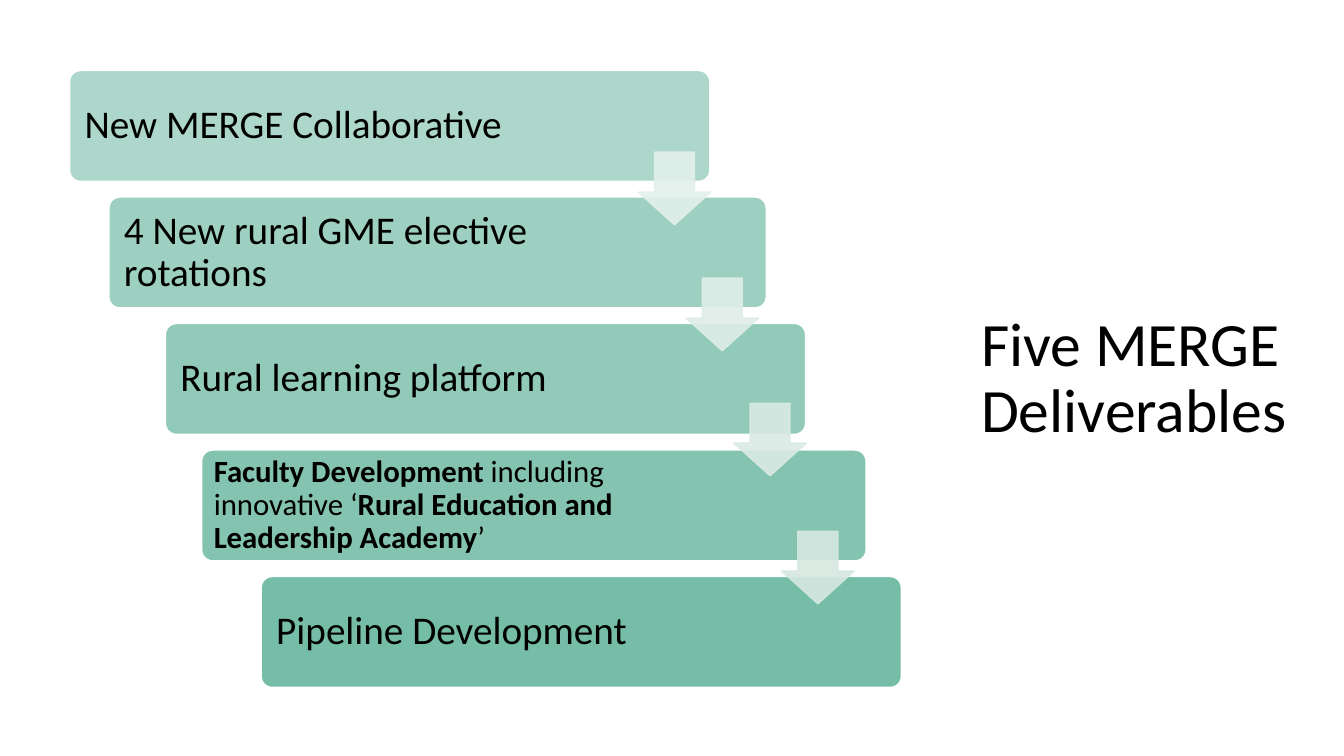
from dataclasses import dataclass

from lxml import etree
from pptx import Presentation
from pptx import util as u
from pptx.dml.color import RGBColor
from pptx.enum import shapes, text
from pptx.oxml.ns import qn

FONT = "Calibri"
BLACK = "000000"
FIRST_TOP = 0.7
STEP_PITCH = 1.255
STEP_HEIGHT = 1.1
LABEL_GAP = 0.03
ARROW_SIZE = 0.72
ARROW_LEFT = 6.33
ARROW_SHIFT = 0.474
ARROW_OPACITY = 90


@dataclass(frozen=True)
class Phrase:
    wording: str
    bold: bool = False


@dataclass(frozen=True)
class Step:
    left: float
    width: float
    label_width: float
    fill: str
    phrases: tuple[Phrase, ...]
    size: int = 28
    inset: float = 0.12


@dataclass(frozen=True)
class Arrow:
    top: float
    fill: str


STEPS = (
    Step(0.69, 6.35, 5.03, "ACD7CA", (Phrase("New MERGE Collaborative"),)),
    Step(1.08, 6.52, 5.23, "9ED0C1", (Phrase("4 New rural GME elective rotations"),)),
    Step(1.64, 6.35, 5.1, "91CAB9", (Phrase("Rural learning platform"),)),
    Step(2, 6.59, 5.29, "83C3B0", (
        Phrase("Faculty Development ", True),
        Phrase("including innovative ‘"),
        Phrase("Rural Education and Leadership Academy", True),
        Phrase("’"),
    ), 22, 0.09),
    Step(2.59, 6.35, 5.1, "75BDA7", (Phrase("Pipeline Development"),)),
)

ARROWS = (
    Arrow(1.51, "E3F0EC"),
    Arrow(2.76, "DEEDE8"),
    Arrow(4, "DAEAE5"),
    Arrow(5.27, "D6E8E1"),
)


def color(code: str) -> RGBColor:
    return RGBColor.from_string(code)


def paint(shape, fill: str, outline: str) -> None:
    shape.shadow.inherit = False
    shape.fill.solid()
    shape.fill.fore_color.rgb = color(fill)
    shape.line.color.rgb = color(outline)
    shape.line.width = u.Pt(1)


def style(paragraph, size: int) -> None:
    paragraph.alignment = text.PP_ALIGN.LEFT
    paragraph.line_spacing = 0.9
    paragraph.font.name = FONT
    paragraph.font.size = u.Pt(size)
    paragraph.font.color.rgb = color(BLACK)


def draw_step(cascade, step: Step, top: float) -> None:
    bar = cascade.shapes.add_shape(
        shapes.MSO_SHAPE.ROUNDED_RECTANGLE, u.Inches(step.left), u.Inches(top),
        u.Inches(step.width), u.Inches(STEP_HEIGHT))
    bar.adjustments[0] = 0.1
    paint(bar, step.fill, "FFFFFF")

    label = cascade.shapes.add_textbox(
        u.Inches(step.left + LABEL_GAP), u.Inches(top + LABEL_GAP),
        u.Inches(step.label_width), u.Inches(STEP_HEIGHT - 2 * LABEL_GAP))
    frame = label.text_frame
    frame.word_wrap = True
    frame.vertical_anchor = text.MSO_ANCHOR.MIDDLE
    frame.margin_left = frame.margin_right = u.Inches(step.inset)
    frame.margin_top = frame.margin_bottom = u.Inches(step.inset)
    paragraph = frame.paragraphs[0]
    style(paragraph, step.size)
    for phrase in step.phrases:
        run = paragraph.add_run()
        run.text = phrase.wording
        if phrase.bold:
            run.font.bold = True


def draw_arrow(cascade, arrow: Arrow, left: float) -> None:
    pointer = cascade.shapes.add_shape(
        shapes.MSO_SHAPE.DOWN_ARROW, u.Inches(left), u.Inches(arrow.top),
        u.Inches(ARROW_SIZE), u.Inches(ARROW_SIZE))
    pointer.adjustments[0] = 0.55
    pointer.adjustments[1] = 0.45
    paint(pointer, arrow.fill, arrow.fill)
    for tint in pointer.element.spPr.iter(qn("a:srgbClr")):
        etree.SubElement(tint, qn("a:alpha")).set("val", str(ARROW_OPACITY * 1000))


def draw_title(slide) -> None:
    title = slide.shapes.title
    title.left, title.top = u.Inches(9.63), u.Inches(1)
    title.width, title.height = u.Inches(3.69), u.Inches(5.53)
    frame = title.text_frame
    frame.text = "Five MERGE Deliverables"
    frame.word_wrap = True
    frame.auto_size = text.MSO_AUTO_SIZE.NONE
    frame.vertical_anchor = text.MSO_ANCHOR.MIDDLE
    style(frame.paragraphs[0], 44)


def main() -> None:
    deck = Presentation()
    deck.slide_width, deck.slide_height = u.Inches(13.33), u.Inches(7.5)
    slide = deck.slides.add_slide(deck.slide_layouts[5])
    draw_title(slide)
    cascade = slide.shapes.add_group_shape()
    for row, step in enumerate(STEPS):
        draw_step(cascade, step, FIRST_TOP + row * STEP_PITCH)
    for row, arrow in enumerate(ARROWS):
        draw_arrow(cascade, arrow, ARROW_LEFT + row * ARROW_SHIFT)
    deck.save("out.pptx")


if __name__ == "__main__":
    main()
